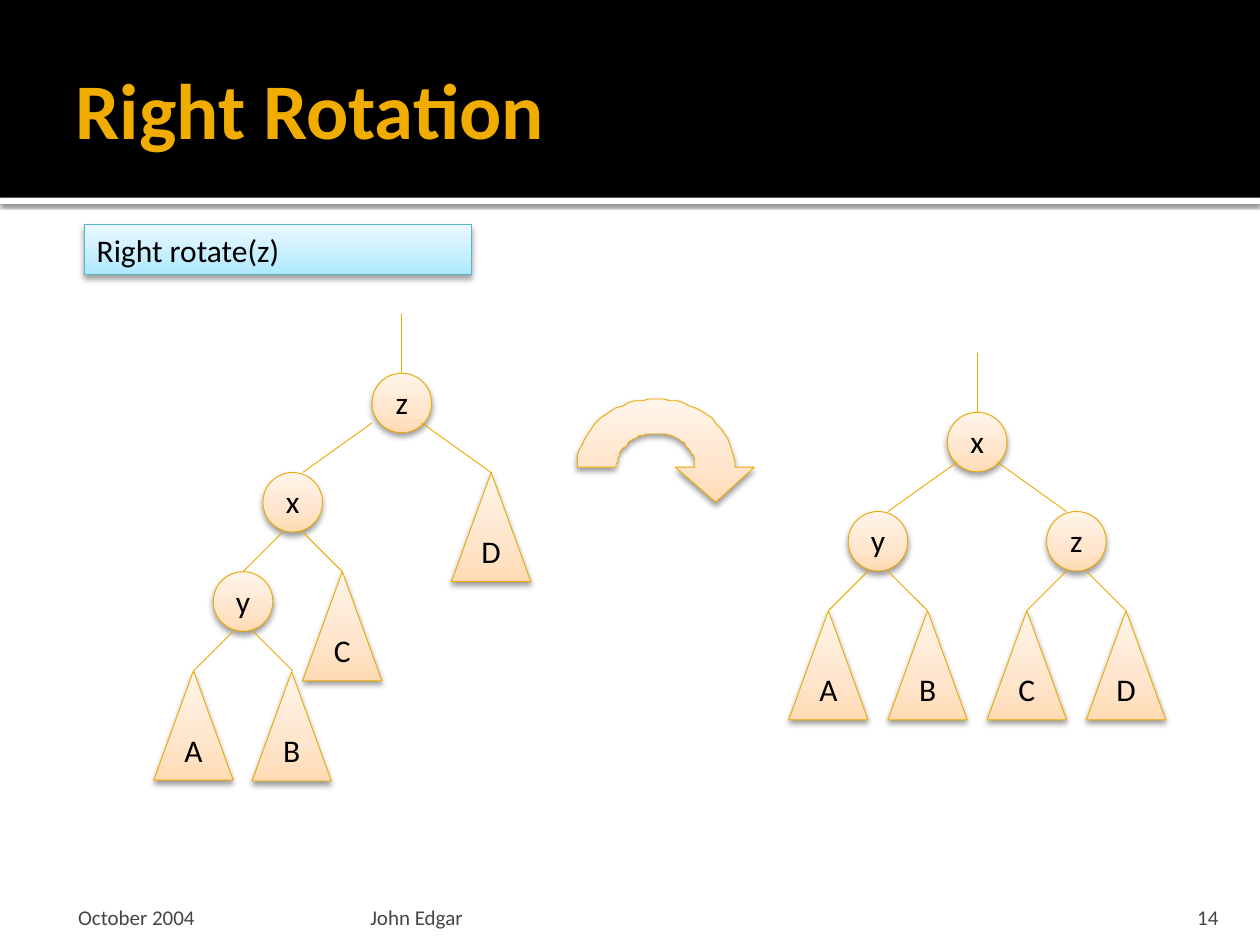
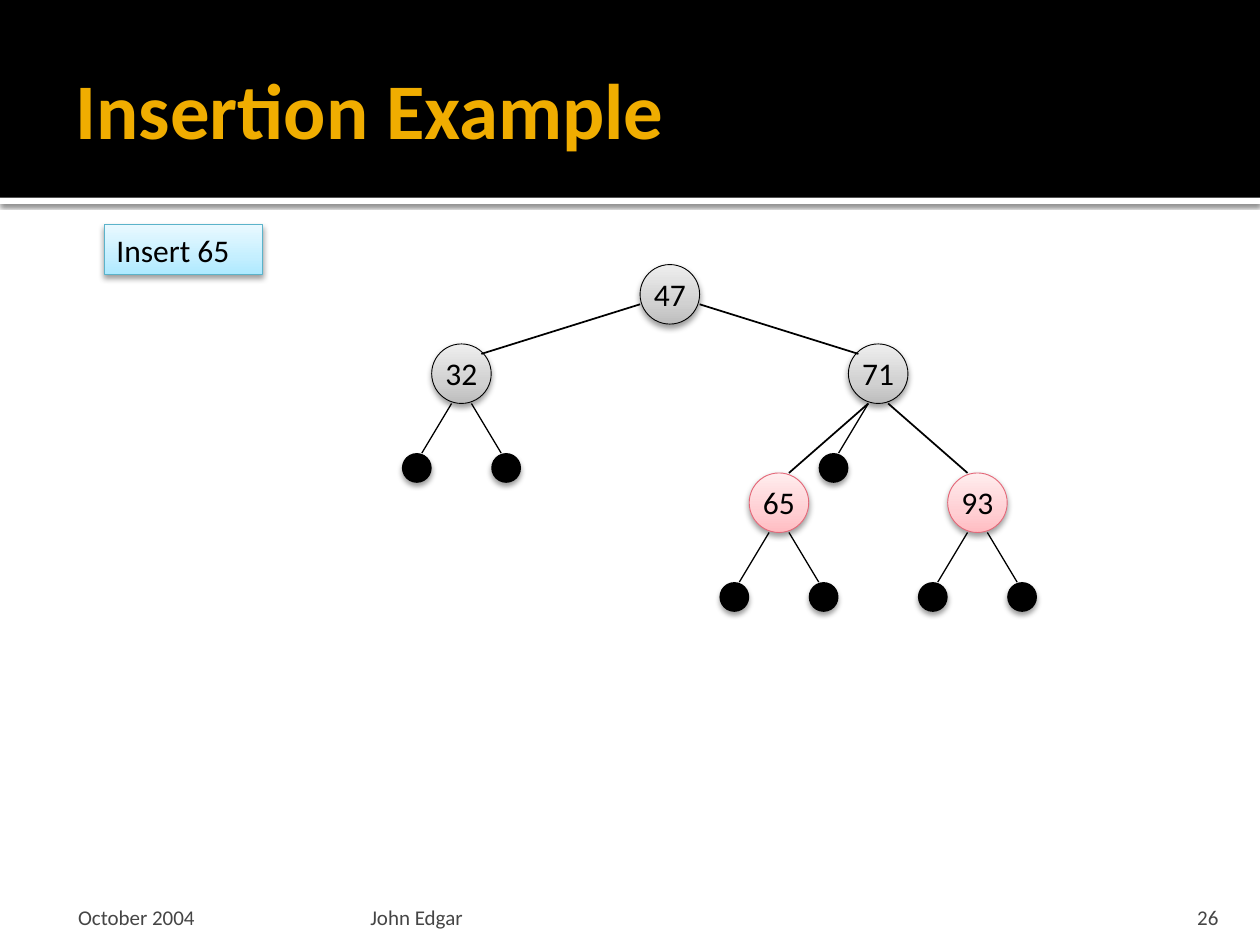
from copy import deepcopy
from math import cos, pi, sin

from lxml import etree
from pptx import Presentation
from pptx.dml.color import RGBColor
from pptx.enum.shapes import MSO_CONNECTOR, MSO_SHAPE
from pptx.enum.text import MSO_ANCHOR, PP_ALIGN
from pptx.oxml.ns import qn
from pptx.util import Pt

LEFT, CENTER, RIGHT = PP_ALIGN.LEFT, PP_ALIGN.CENTER, PP_ALIGN.RIGHT
TOP, MIDDLE, BOTTOM = MSO_ANCHOR.TOP, MSO_ANCHOR.MIDDLE, MSO_ANCHOR.BOTTOM
RECT, OVAL, TRIANGLE = MSO_SHAPE.RECTANGLE, MSO_SHAPE.OVAL, MSO_SHAPE.ISOSCELES_TRIANGLE
STRAIGHT = MSO_CONNECTOR.STRAIGHT

FONT = "Calibri"
BLACK, WHITE, GOLD, GREY = "000000", "FFFFFF", "F0AD00", "454545"
ORANGE_STYLE = (("FFDBB5", "FFE5CB", "FFF5EB"), "EBA900")
BLUE_STYLE = (("ADE9FF", "C5EFFF", "E9F9FF"), "5BB3CA")
BLACK_STYLE = (("BDBDBD", "D1D1D1", "EEEEEE"), BLACK)
RED_STYLE = (("FFBCC2", "FFCFD3", "FFEDEE"), "E46778")
U = 5.67
NODE, LEAF, TREE_W, TREE_H = 6, 3, 8, 11


def rgb(value):
    return RGBColor.from_string(value)


def box(x, y, w, h):
    return Pt(x), Pt(y), Pt(w), Pt(h)


def add_shadow(sp, alpha=38, blur=3.5, dist=2):
    sp.shadow.inherit = False
    effects = sp._element.spPr.find(qn("a:effectLst"))
    shadow = etree.SubElement(effects, qn("a:outerShdw"), blurRad=str(Pt(blur)),
                              dist=str(Pt(dist)), dir="5400000", rotWithShape="0")
    color = etree.SubElement(shadow, qn("a:srgbClr"), val=BLACK)
    etree.SubElement(color, qn("a:alpha"), val=str(alpha * 1000))


def paint(sp, color):
    sp.fill.solid()
    sp.fill.fore_color.rgb = rgb(color)
    sp.line.fill.background()
    sp.shadow.inherit = False


def paint_gradient(sp, style):
    colors, outline = style
    sp.fill.gradient()
    sp.fill.gradient_angle = 90
    stops = sp._element.spPr.find(qn("a:gradFill")).find(qn("a:gsLst"))
    stops.append(deepcopy(stops[-1]))
    for stop, color, position in zip(sp.fill.gradient_stops, colors, (0, 0.35, 1)):
        stop.color.rgb = rgb(color)
        stop.position = position
    sp.line.color.rgb = rgb(outline)
    sp.line.width = Pt(0.5)
    add_shadow(sp)


def write(sp, text, size, color, align=LEFT, anchor=TOP, insets=(7.2, 3.6, 7.2, 3.6), bold=False):
    tf = sp.text_frame
    tf.text = text
    tf.word_wrap = True
    tf.vertical_anchor = anchor
    tf.margin_left, tf.margin_top, tf.margin_right, tf.margin_bottom = map(Pt, insets)
    p = tf.paragraphs[0]
    p.alignment = align
    font = p.runs[0].font
    font.name, font.size, font.bold = FONT, Pt(size), bold
    font.color.rgb = rgb(color)


def add_bands(s, layout):
    black = s.shapes.add_shape(RECT, *box(0, 0, 720, 113))
    paint(black, BLACK)
    white = s.shapes.add_shape(RECT, *box(0, 113, 720, 3.6))
    paint(white, WHITE)
    add_shadow(white, 60, 2.5, 0.8)
    for i, band in enumerate((white, black)):
        band._element.nvSpPr.cNvPr.set("id", str(100 + i))
        layout.shapes._spTree.insert(2 + i, band._element)


def add_footer(s, number):
    fields = (("October 2004", 36, 168, 8.6, 3.6, LEFT),
              ("John Edgar", 208, 433.5, 3.6, 3.6, LEFT),
              (number, 645.8, 57.6, 7.2, 7.2, RIGHT))
    for text, x, w, left, right, align in fields:
        sp = s.shapes.add_textbox(*box(x, 509.7, w, 21.6))
        write(sp, text, 12, GREY, align, BOTTOM, (left, 3.6, right, 0))


def add_frame(prs, layout, title, number):
    s = prs.slides.add_slide(layout)
    sp = s.shapes.title
    sp.left, sp.top, sp.width, sp.height = box(36, 12.2, 648, 98.6)
    write(sp, title, 45, GOLD, LEFT, MIDDLE, (7.2, 3.6, 3.6, 3.6), True)
    add_footer(s, number)
    return s


def add_caption(s, text, x, w):
    sp = s.shapes.add_shape(RECT, *box(x, 128.2, w, 28.8))
    paint_gradient(sp, BLUE_STYLE)
    write(sp, text, 18, BLACK)


class Tree:
    def __init__(self, s, left, top):
        self.s, self.left, self.top = s, left, top

    def place(self, cx, y, w, h):
        return box(self.left + (cx - w / 2) * U, self.top + y * U, w * U, h * U)

    def edge(self, x1, y1, x2, y2, color=BLACK, width=1.0):
        points = (Pt(self.left + x1 * U), Pt(self.top + y1 * U),
                  Pt(self.left + x2 * U), Pt(self.top + y2 * U))
        line = self.s.shapes.add_connector(STRAIGHT, *points)
        line.line.color.rgb = rgb(color)
        line.line.width = Pt(width)
        etree.SubElement(line._element.spPr, qn("a:effectLst"))

    def labelled(self, kind, text, cx, y, w, h, label_y, style):
        group = self.s.shapes.add_group_shape()
        paint_gradient(group.shapes.add_shape(kind, *self.place(cx, y, w, h)), style)
        label = group.shapes.add_textbox(*self.place(cx, y + label_y, NODE, 3.8))
        write(label, text, 18, BLACK, CENTER, MIDDLE, (1.4, 0, 1.4, 0))

    def node(self, text, cx, y, style=ORANGE_STYLE):
        self.labelled(OVAL, text, cx, y, NODE, NODE, 1, style)

    def subtree(self, text, cx, y):
        self.labelled(TRIANGLE, text, cx, y, TREE_W, TREE_H, 6, ORANGE_STYLE)

    def leaf(self, cx, y, side):
        self.edge(cx + side, y + NODE, cx + 4 * side, y + 11, width=0.75)
        sp = self.s.shapes.add_shape(OVAL, *self.place(cx + 4.5 * side, y + 11, LEAF, LEAF))
        paint(sp, BLACK)
        add_shadow(sp, blur=3.1)


def add_rotation_tree(s, left, top, nodes, subtrees, edges):
    tree = Tree(s, left, top)
    for node in nodes:
        tree.node(*node)
    for subtree in subtrees:
        tree.subtree(*subtree)
    for edge in edges:
        tree.edge(*edge, ORANGE_STYLE[1], 0.5)


def add_turn_arrow(s, left, top, w, h):
    cx, base = left + w * 4 / 9, top + h * 2 / 3

    def arc(rx, ry, start, end, steps=36):
        angles = [start + (end - start) * i / steps for i in range(steps + 1)]
        return [(cx + rx * cos(a), base - ry * sin(a)) for a in angles]

    outer = arc(w * 4 / 9, h * 2 / 3, pi, 0)
    inner = arc(w * 2 / 9, h / 3, 0, pi)
    head = [(left + w, base), (left + w * 7 / 9, top + h), (left + w * 5 / 9, base)]
    points = outer + head + inner
    builder = s.shapes.build_freeform(*points[0], scale=Pt(1))
    builder.add_line_segments(points[1:], close=True)
    paint_gradient(builder.convert_to_shape(), ORANGE_STYLE)


def build_rotation(s):
    add_caption(s, "Right rotate(z)", 48.2, 221)
    add_rotation_tree(
        s, 450.7, 201.6,
        (("x", 19, 6), ("y", 9, 16), ("z", 29, 16)),
        [(text, 4 + 10 * i, 26) for i, text in enumerate("ABCD")],
        ((19, 0, 19, 6), (17, 11, 10, 16), (21, 11, 28, 16), (8, 22, 4, 26),
         (10, 22, 14, 26), (28, 22, 24, 26), (30, 22, 34, 26)))
    add_rotation_tree(
        s, 87.9, 179.3,
        (("z", 25, 6), ("x", 14, 16), ("y", 9, 26)),
        (("A", 4, 36), ("B", 13.9, 36.1), ("C", 19, 26), ("D", 34, 16)),
        ((25, 0, 25, 6), (22, 11, 15, 16), (27, 11, 34, 16), (13, 22, 9, 26),
         (15, 22, 19, 26), (8, 32, 4, 36), (10, 32, 14, 36)))
    add_turn_arrow(s, 329.8, 228, 101.5, 58.6)


def build_insertion(s):
    add_caption(s, "Insert 65", 59.5, 90.7)
    tree = Tree(s, 229.7, 151.2)
    for node in (("47", 27, 0, BLACK_STYLE), ("32", 6, 8, BLACK_STYLE), ("71", 48, 8, BLACK_STYLE),
                 ("65", 38, 21, RED_STYLE), ("93", 58, 21, RED_STYLE)):
        tree.node(*node)
    for edge in ((24, 4, 8, 9), (30, 4, 46, 9), (47, 14, 39, 21), (49, 14, 57, 21)):
        tree.edge(*edge)
    for cx, y in ((6, 8), (38, 21), (58, 21)):
        for side in (-1, 1):
            tree.leaf(cx, y, side)
    tree.leaf(48, 8, -1)


def main():
    prs = Presentation()
    prs.slide_width, prs.slide_height = Pt(720), Pt(540)
    layout = prs.slide_layouts[5]
    rotation = add_frame(prs, layout, "Right Rotation", "14")
    add_bands(rotation, layout)
    build_rotation(rotation)
    build_insertion(add_frame(prs, layout, "Insertion Example", "26"))
    prs.save("out.pptx")


if __name__ == "__main__":
    main()
